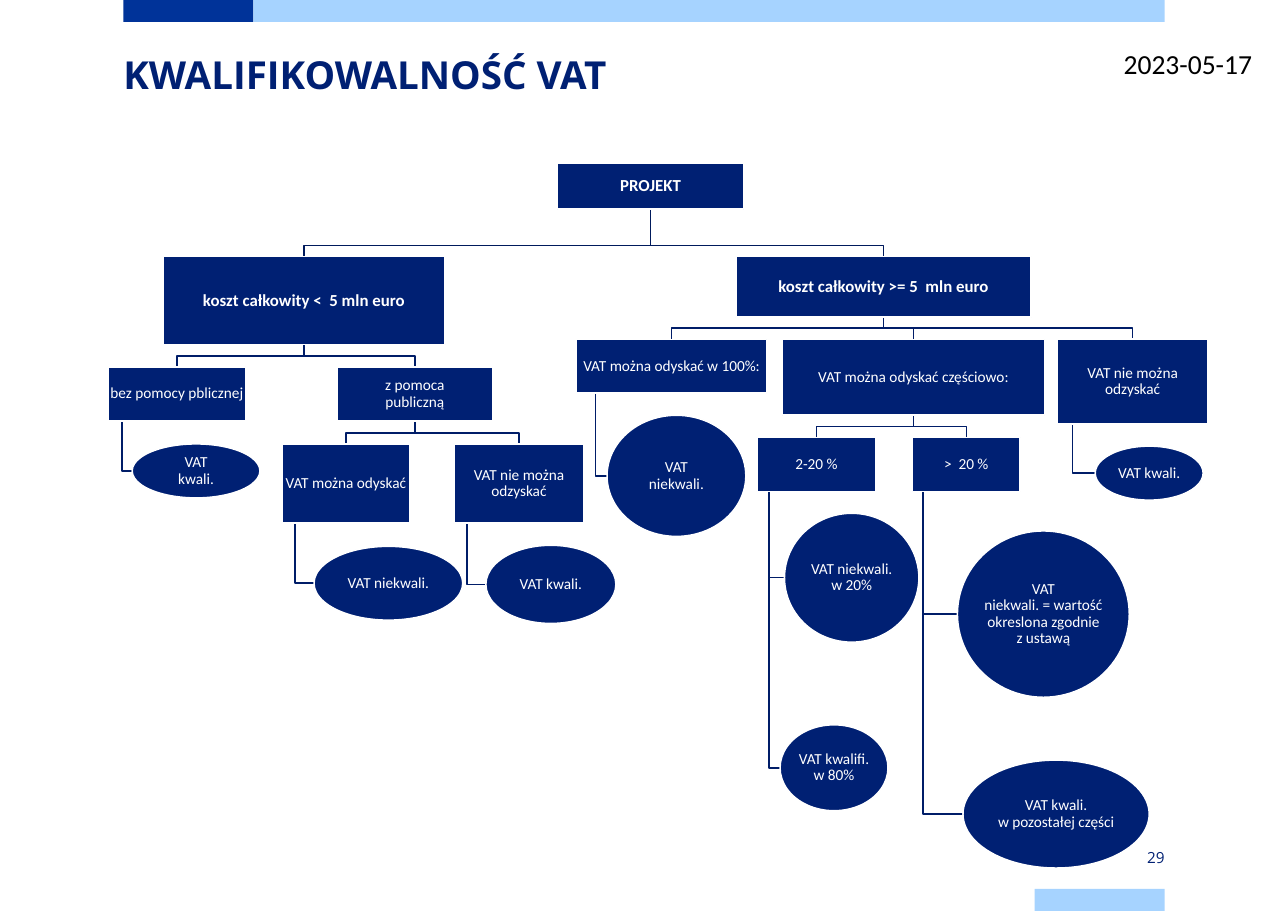
from collections import namedtuple
from dataclasses import dataclass

from pptx import Presentation
from pptx.dml.color import RGBColor
from pptx.enum.shapes import MSO_SHAPE
from pptx.enum.text import MSO_ANCHOR, PP_ALIGN
from pptx.util import Inches, Pt


@dataclass(frozen=True)
class Theme:
    """Colours, fonts and type sizes of the slide."""
    navy: str = "002073"
    blue: str = "003399"
    sky: str = "A6D3FF"
    white: str = "FFFFFF"
    black: str = "000000"
    trunk: str = "001A5C"
    branch: str = "001D68"
    heading_font: str = "Open Sans"
    body_font: str = "Calibri"
    title_size: float = 25.2
    date_size: float = 18
    major_size: float = 11
    minor_size: float = 10


Node = namedtuple("Node", "parent kind left top width height text")
RECT, OVAL = MSO_SHAPE.RECTANGLE, MSO_SHAPE.OVAL
BEND_GAP = 0.1
HANG_SHARE = 0.1

NODES = {
    "project": Node(None, RECT, 5.06, 1.48, 1.69, 0.42, "PROJEKT"),
    "below": Node("project", RECT, 1.48, 2.33, 2.56, 0.8, "koszt całkowity <  5 mln euro"),
    "no_aid": Node("below", RECT, 0.98, 3.33, 1.25, 0.49, "bez pomocy pblicznej"),
    "no_aid_vat": Node("no_aid", OVAL, 1.2, 4.03, 1.16, 0.49, "VAT\nkwali."),
    "aid": Node("below", RECT, 3.06, 3.33, 1.41, 0.49, "z pomoca\npubliczną"),
    "aid_yes": Node("aid", RECT, 2.56, 4.03, 1.16, 0.72, "VAT można odyskać"),
    "aid_yes_vat": Node("aid_yes", OVAL, 2.85, 4.96, 1.35, 0.67, "VAT niekwali."),
    "aid_no": Node("aid", RECT, 4.12, 4.03, 1.18, 0.72, "VAT nie można odzyskać"),
    "aid_no_vat": Node("aid_no", OVAL, 4.41, 4.95, 1.18, 0.71, "VAT kwali."),
    "above": Node("project", RECT, 6.68, 2.33, 2.68, 0.55, "koszt całkowity >= 5  mln euro"),
    "full": Node("above", RECT, 5.23, 3.08, 1.73, 0.49, "VAT można odyskać w 100%:"),
    "full_vat": Node("full", OVAL, 5.51, 3.77, 1.26, 1.1, "VAT\nniekwali."),
    "partial": Node("above", RECT, 7.1, 3.08, 2.38, 0.69, "VAT można odyskać częściowo:"),
    "low": Node("partial", RECT, 6.87, 3.97, 1.08, 0.49, "2-20 %"),
    "low_out": Node("low", OVAL, 7.12, 4.66, 1.22, 1.17, "VAT niekwali.\nw 20%"),
    "low_in": Node("low", OVAL, 7.08, 6.58, 0.98, 0.78, "VAT kwalifi.\nw 80%"),
    "high": Node("partial", RECT, 8.28, 3.97, 0.98, 0.49, ">  20 %"),
    "high_out": Node("high", OVAL, 8.69, 4.82, 1.56, 1.51,
                     "VAT\nniekwali. = wartość okreslona zgodnie z ustawą"),
    "high_in": Node("high", OVAL, 8.74, 6.9, 1.69, 0.98, "VAT kwali.\nw pozostałej części"),
    "none": Node("above", RECT, 9.6, 3.08, 1.36, 0.77, "VAT nie można odzyskać"),
    "none_vat": Node("none", OVAL, 9.94, 4.05, 0.98, 0.49, "VAT kwali."),
}


class DecisionSlide:
    """Draws bars, labels, nodes and links on one slide in one style."""

    def __init__(self, slide, theme):
        self.shapes = slide.shapes
        self.theme = theme

    def apply(self, target, values):
        for name, value in values.items():
            setattr(target, name, value)

    def set_text(self, frame, text, colour, font, frame_format, paragraph_format, inset=None):
        if inset is not None:
            sides = ("left", "top", "right", "bottom")
            self.apply(frame, {f"margin_{side}": Inches(inset) for side in sides})
        self.apply(frame, frame_format)
        paragraph = frame.paragraphs[0]
        paragraph.text = text
        self.apply(paragraph, paragraph_format)
        self.apply(paragraph.font, font)
        paragraph.font.color.rgb = RGBColor.from_string(colour)

    def block(self, kind, box, fill, outline=None):
        block = self.shapes.add_shape(kind, *map(Inches, box))
        block.shadow.inherit = False
        block.fill.solid()
        block.fill.fore_color.rgb = RGBColor.from_string(fill)
        if outline:
            block.line.color.rgb = RGBColor.from_string(outline)
            block.line.width = Pt(1)
        else:
            block.line.fill.background()
        return block

    def label(self, box, text, colour, font, frame_format, paragraph_format, inset=None):
        label = self.shapes.add_textbox(*map(Inches, box))
        self.set_text(label.text_frame, text, colour, font, frame_format, paragraph_format, inset)

    def node(self, node):
        major = node.parent in (None, "project")
        size = self.theme.major_size if major else self.theme.minor_size
        box = (node.left, node.top, node.width, node.height)
        block = self.block(node.kind, box, self.theme.navy, self.theme.white)
        self.set_text(block.text_frame, node.text, self.theme.white,
                      {"name": self.theme.body_font, "size": Pt(size), "bold": major},
                      {"word_wrap": True, "vertical_anchor": MSO_ANCHOR.MIDDLE},
                      {"alignment": PP_ALIGN.CENTER, "line_spacing": 0.9}, inset=0.01)

    def link(self, parent, child):
        bottom = parent.top + parent.height
        if child.kind == OVAL:
            stem = parent.left + HANG_SHARE * parent.width
            level = child.top + child.height / 2
            route = [(stem, bottom), (stem, level), (child.left, level)]
        else:
            stem = parent.left + parent.width / 2
            centre = child.left + child.width / 2
            bend = child.top - BEND_GAP
            route = [(stem, bottom), (stem, bend), (centre, bend), (centre, child.top)]
        start, *turns = [(Inches(x), Inches(y)) for x, y in route]
        outline = self.shapes.build_freeform(*start)
        outline.add_line_segments(turns, close=False)
        elbow = outline.convert_to_shape()
        elbow.shadow.inherit = False
        elbow.fill.background()
        colour = self.theme.trunk if child.parent == "project" else self.theme.branch
        elbow.line.color.rgb = RGBColor.from_string(colour)
        elbow.line.width = Pt(1)


def main():
    theme = Theme()
    deck = Presentation()
    deck.slide_width, deck.slide_height = Inches(11.69), Inches(8.27)
    page = DecisionSlide(deck.slides.add_slide(deck.slide_layouts[6]), theme)

    for left, top, width, colour in [(1.12, 0, 1.18, theme.blue), (2.3, 0, 8.27, theme.sky),
                                     (9.39, 8.07, 1.18, theme.sky)]:
        page.block(RECT, (left, top, width, 0.2), colour)

    page.label((1.12, 0.38, 9.84, 0.69), "KWALIFIKOWALNOŚĆ VAT", theme.navy,
               {"name": theme.heading_font, "size": Pt(theme.title_size), "bold": True},
               {"word_wrap": True}, {"line_spacing": Pt(36)}, inset=0)
    page.label((9.39, 7.68, 1.18, 0.2), "29", theme.navy,
               {"name": theme.heading_font, "size": Pt(theme.minor_size)},
               {"word_wrap": True, "vertical_anchor": MSO_ANCHOR.MIDDLE},
               {"alignment": PP_ALIGN.RIGHT}, inset=0)
    page.label((10.1, 0.38, 1.38, 0.4), "2023-05-17", theme.black,
               {"name": theme.body_font, "size": Pt(theme.date_size)},
               {"word_wrap": False}, {"alignment": PP_ALIGN.LEFT})

    for node in NODES.values():
        if node.parent:
            page.link(NODES[node.parent], node)
    for node in NODES.values():
        page.node(node)

    deck.save("out.pptx")


if __name__ == "__main__":
    main()
